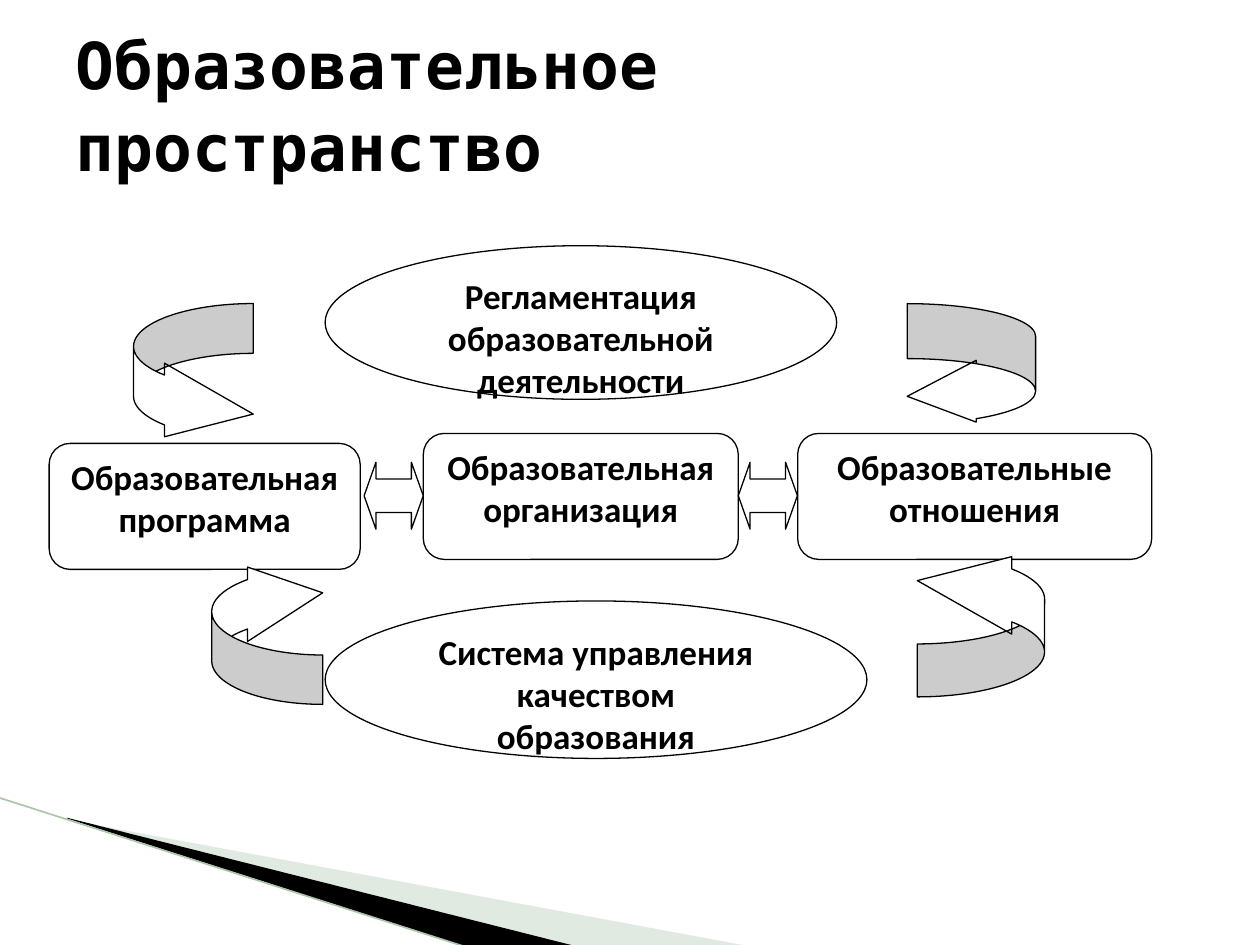
from lxml import etree
from pptx import Presentation
from pptx.dml.color import RGBColor
from pptx.enum import shapes as es, text as et
from pptx.oxml.ns import qn
from pptx.util import Pt

COLORS = {"ink": "000000", "paper": "FFFFFF", "sage": "B3CBB5", "edge": "ACC6AE"}
KIND = es.MSO_SHAPE


def rgb(name):
    return RGBColor.from_string(COLORS[name])


def wedge(slide, points, color, alpha=None):
    """Draw a borderless polygon, with opacity in percent if given."""
    pts = [(Pt(x), Pt(y)) for x, y in points]
    form = slide.shapes.build_freeform(*pts[0])
    form.add_line_segments(pts[1:])
    shape = form.convert_to_shape()
    shape.shadow.inherit = False
    shape.fill.solid()
    shape.fill.fore_color.rgb = rgb(color)
    shape.line.fill.background()
    if alpha:
        tone = shape.fill._xPr.find(".//" + qn("a:srgbClr"))
        etree.SubElement(tone, qn("a:alpha")).set("val", str(alpha * 1000))


def stripe(slide, x1, y1, x2, y2):
    line = slide.shapes.add_connector(
        es.MSO_CONNECTOR.STRAIGHT, Pt(x1), Pt(y1), Pt(x2), Pt(y2))
    line.line.color.rgb = rgb("edge")
    line.line.width = Pt(0.95)
    etree.SubElement(line._element.spPr, qn("a:effectLst"))


def write(para, words, font, size):
    run = para.add_run()
    run.text = words
    run.font.name = font
    run.font.size = Pt(size)
    run.font.bold = True
    run.font.color.rgb = rgb("ink")


def title(slide, words):
    box = slide.shapes.add_textbox(Pt(36), Pt(21.6), Pt(588), Pt(74.2))
    frame = box.text_frame
    frame.word_wrap = True
    frame.vertical_anchor = et.MSO_ANCHOR.MIDDLE
    para = frame.paragraphs[0]
    para.line_spacing = 1.05
    write(para, words, "DejaVu Sans Mono", 36.9)


def figure(slide, kind, area, adjs=(), turn=0):
    shape = slide.shapes.add_shape(kind, *(Pt(v) for v in area))
    shape.shadow.inherit = False
    shape.fill.solid()
    shape.fill.fore_color.rgb = rgb("paper")
    shape.line.color.rgb = rgb("ink")
    shape.line.width = Pt(0.75)
    shape.rotation = turn
    for i, value in enumerate(adjs):
        shape.adjustments[i] = value
    return shape


def label(shape, *lines):
    frame = shape.text_frame
    frame.word_wrap = True
    frame.vertical_anchor = et.MSO_ANCHOR.TOP
    for i, words in enumerate(lines):
        para = frame.add_paragraph() if i else frame.paragraphs[0]
        para.alignment = et.PP_ALIGN.CENTER
        write(para, words, "Calibri", 20)


def main():
    deck = Presentation()
    deck.slide_width, deck.slide_height = Pt(720), Pt(540)
    slide = deck.slides.add_slide(deck.slide_layouts[6])

    wedge(slide, [(39.6, 468.6), (428.4, 540.7), (328.3, 540.7), (39.6, 468)],
          "sage", 40)
    wedge(slide, [(38.2, 467.3), (329, 540.7), (267.8, 541.4), (38.9, 468)], "ink")
    stripe(slide, -0.7, 455.8, 267.1, 541.4)
    title(slide, "Образовательное пространство")

    for x, y, w, words in [
            (28.1, 253.4, 177.8, "Образовательная программа"),
            (241.9, 247.7, 180, "Образовательная организация"),
            (455.8, 247.7, 202.3, "Образовательные отношения")]:
        label(figure(slide, KIND.ROUNDED_RECTANGLE, (x, y, w, 72), [0.167]), words)

    for area, lines in [
            ((185.8, 140.4, 292.3, 87.8),
             ["Регламентация образовательной деятельности"]),
            ((185.8, 343.4, 309.6, 90),
             ["Система управления качеством", "образования"])]:
        label(figure(slide, KIND.OVAL, area), *lines)

    for x in (208.1, 421.9):
        figure(slide, KIND.LEFT_RIGHT_ARROW, (x, 264.2, 33.8, 38.2), [0.5, 0.2])

    right, left = KIND.CURVED_RIGHT_ARROW, KIND.CURVED_LEFT_ARROW
    for kind, area, adjs, turn in [
            (right, (76.3, 173.5, 68.4, 84.2), (0.416, 0.832, 0.742), 0),
            (right, (524.2, 309.6, 72.7, 88.6), (0.416, 0.832, 0.742), 180),
            (left, (518.4, 173.5, 73.4, 70.6), (0.445, 0.949, 0.677), 0),
            (left, (121, 317.5, 63.4, 85), (0.445, 0.953, 0.677), 180)]:
        figure(slide, kind, area, adjs, turn)

    deck.save("out.pptx")


if __name__ == "__main__":
    main()
